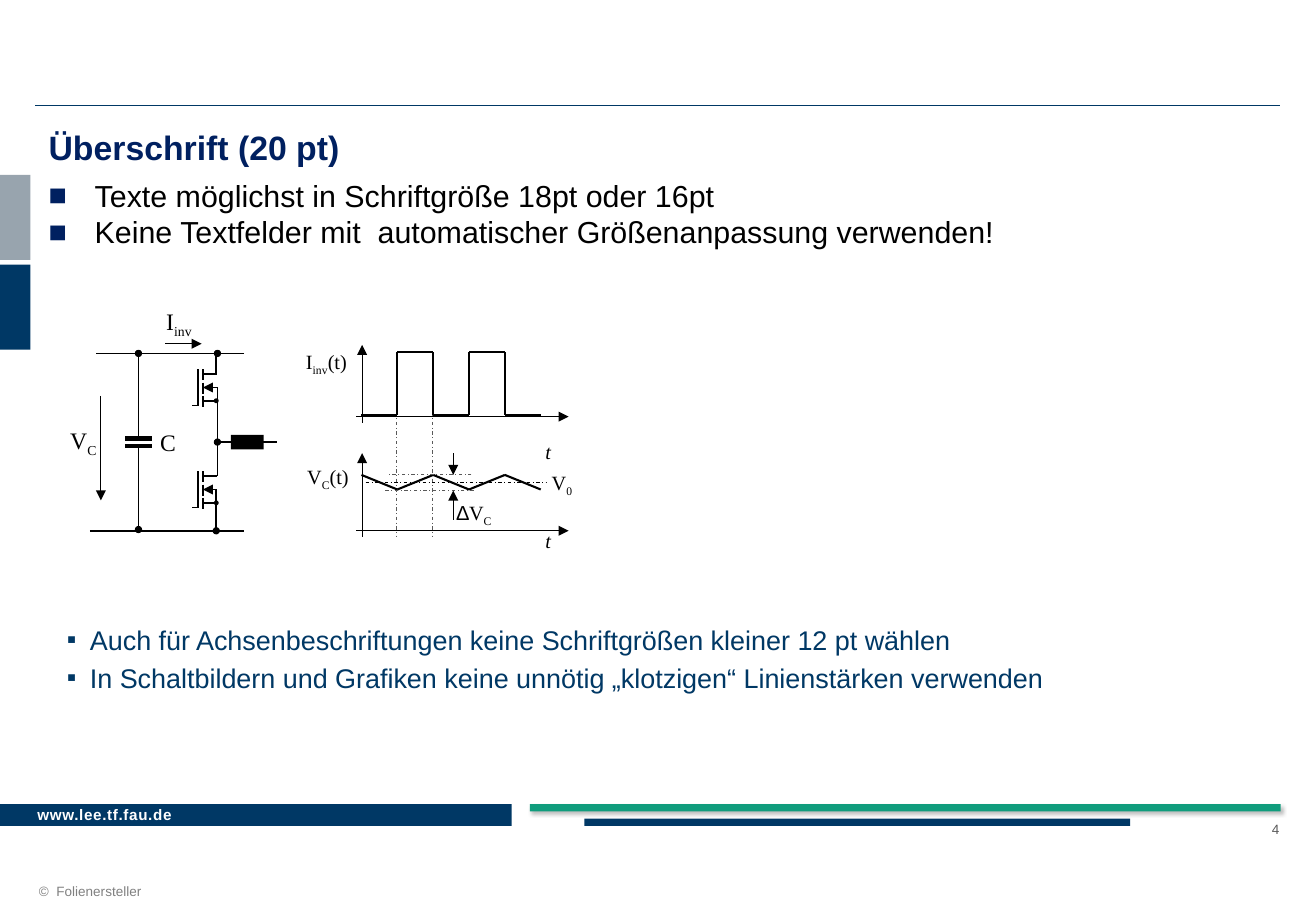
import itertools
from dataclasses import dataclass

import lxml.etree
import pptx
import pptx.dml.color
import pptx.enum.dml
import pptx.enum.shapes
import pptx.enum.text
import pptx.oxml.ns
import pptx.util

Inches = pptx.util.Inches
Pt = pptx.util.Pt
Shape = pptx.enum.shapes.MSO_SHAPE
SUBSCRIPT = {"baseline": -25}


@dataclass(frozen=True)
class Theme:
    """Colours, fonts, type sizes and line widths of the slide."""
    navy: str = "003865"
    heading_blue: str = "002060"
    green: str = "109C7C"
    silver: str = "98A4AE"
    grey: str = "595959"
    light_grey: str = "808080"
    black: str = "000000"
    white: str = "FFFFFF"
    sans: str = "Arial"
    serif: str = "Times New Roman"
    heading: float = 20
    body: float = 18
    note: float = 16
    circuit: float = 14
    axis: float = 12
    address: float = 9
    footer: float = 8
    hair: float = 0.5
    gate: float = 0.75
    wire: float = 1
    curve: float = 1.25
    channel: float = 1.5
    plate: float = 2.5


def add_xml(parent, tag, **attributes):
    """Append a DrawingML element and return it."""
    return lxml.etree.SubElement(parent, pptx.oxml.ns.qn(tag), attributes)


def write(para, text, *, size, font, color, bold=False, italic=False, baseline=0, spacing=0):
    """Add formatted text to a paragraph."""
    span = para.add_run()
    span.text = text
    span.font.size = Pt(size)
    span.font.name = font
    span.font.bold = bold
    span.font.italic = italic
    span.font.color.rgb = pptx.dml.color.RGBColor.from_string(color)
    properties = span._r.get_or_add_rPr()
    if baseline:
        properties.set("baseline", str(baseline * 1000))
    if spacing:
        properties.set("spc", str(int(spacing * 100)))


class Painter:
    """Draws styled elements on the current slide."""

    def __init__(self, page, theme):
        self.page = page
        self.theme = theme

    def line(self, start, end, width=None, color=None, dashed=False, head=False, tail=False):
        """Draw a straight line, with arrowheads on request."""
        connector = self.page.shapes.add_connector(
            pptx.enum.shapes.MSO_CONNECTOR.STRAIGHT, *map(Inches, (*start, *end)))
        connector.line.width = Pt(width or self.theme.wire)
        connector.line.color.rgb = pptx.dml.color.RGBColor.from_string(color or self.theme.black)
        if dashed:
            connector.line.dash_style = pptx.enum.dml.MSO_LINE.DASH_DOT
        outline = connector.line._get_or_add_ln()
        if head:
            add_xml(outline, "a:headEnd", type="triangle")
        if tail:
            add_xml(outline, "a:tailEnd", type="triangle")
        add_xml(connector._element.spPr, "a:effectLst")

    def polyline(self, points, width):
        """Join successive points with lines."""
        for start, end in itertools.pairwise(points):
            self.line(start, end, width)

    def shape(self, kind, left, top, width, height, color):
        """Draw a filled shape without outline."""
        shape = self.page.shapes.add_shape(kind, *map(Inches, (left, top, width, height)))
        shape.shadow.inherit = False
        shape.fill.solid()
        shape.fill.fore_color.rgb = pptx.dml.color.RGBColor.from_string(color)
        shape.line.fill.background()
        return shape

    def dot(self, x, y, size=0.06):
        """Draw a junction dot around a point."""
        self.shape(Shape.OVAL, x - size / 2, y - size / 2, size, size, self.theme.black)

    def shadow(self, shape):
        """Give a shape a soft shadow to the lower right."""
        effects = shape._element.spPr.find(pptx.oxml.ns.qn("a:effectLst"))
        outer = add_xml(effects, "a:outerShdw", blurRad=str(Pt(2)), dist=str(Pt(2)),
                        dir="2700000", algn="tl", rotWithShape="0")
        add_xml(add_xml(outer, "a:srgbClr", val=self.theme.grey), "a:alpha", val="38000")

    def text_box(self, left, top, width, height, inset=(0.1, 0.05), wrap=False, fill=None):
        """Add an empty text box."""
        box = self.page.shapes.add_textbox(*map(Inches, (left, top, width, height)))
        frame = box.text_frame
        frame.word_wrap = wrap
        frame.auto_size = (pptx.enum.text.MSO_AUTO_SIZE.NONE if wrap
                           else pptx.enum.text.MSO_AUTO_SIZE.SHAPE_TO_FIT_TEXT)
        frame.margin_left = frame.margin_right = Inches(inset[0])
        frame.margin_top = frame.margin_bottom = Inches(inset[1])
        if fill:
            box.fill.solid()
            box.fill.fore_color.rgb = pptx.dml.color.RGBColor.from_string(fill)
        return frame

    def label(self, place, size, *spans, **box_format):
        """Add a one-line serif label made of (text, format) spans."""
        para = self.text_box(*place, **box_format).paragraphs[0]
        for text, changes in spans:
            style = {"size": size, "font": self.theme.serif, "color": self.theme.black}
            write(para, text, **(style | changes))

    def bullet(self, para, mark, indent, color):
        """Turn a paragraph into a bullet item."""
        properties = para._p.get_or_add_pPr()
        properties.set("marL", str(Inches(indent)))
        properties.set("indent", str(-Inches(indent)))
        add_xml(add_xml(properties, "a:buClr"), "a:srgbClr", val=color)
        add_xml(properties, "a:buFont", typeface=self.theme.sans)
        add_xml(properties, "a:buChar", char=mark)

    def mosfet(self, top):
        """Draw a transistor whose channel starts at the given height."""
        theme = self.theme
        self.polyline([(1.63, top), (1.63, top + 0.3), (1.58, top + 0.3)], theme.gate)
        for step in range(3):
            start = top + 0.11 * step
            self.line((1.67, start), (1.67, start + 0.09), theme.channel)
            self.line((1.67, start + 0.04), (1.79, start + 0.04), head=step == 1)
        self.dot(1.78, top + 0.26, 0.04)

    def axes(self, top, base):
        """Draw a pair of chart axes."""
        self.line((2.98, base + 0.05), (2.98, top), self.theme.hair, tail=True)
        self.line((2.93, base), (4.68, base), self.theme.hair, tail=True)


def draw_frame(painter):
    """Draw the rule, side marks and footer."""
    theme = painter.theme
    painter.line((10.53, 0.87), (0.29, 0.87), color=theme.navy)
    painter.shape(Shape.RECTANGLE, 0, 2.18, 0.25, 0.7, theme.navy)
    painter.shape(Shape.RECTANGLE, 0, 1.44, 0.25, 0.7, theme.silver)
    credit = painter.text_box(0.32, 7.27, 2.61, 0.15, (0, 0), wrap=True).paragraphs[0]
    write(credit, "©  Folienersteller", size=theme.footer, font=theme.sans, color=theme.light_grey)
    number = painter.text_box(10.17, 6.76, 0.36, 0.13, (0, 0), wrap=True).paragraphs[0]
    number.alignment = pptx.enum.text.PP_ALIGN.RIGHT
    write(number, "4", size=theme.footer, font=theme.sans, color=theme.grey)
    painter.shape(Shape.RECTANGLE, 0, 6.62, 4.21, 0.18, theme.navy)
    painter.shape(Shape.RECTANGLE, 4.81, 6.74, 4.49, 0.06, theme.navy)
    painter.shadow(painter.shape(Shape.RECTANGLE, 4.36, 6.62, 6.18, 0.06, theme.green))
    address = painter.text_box(0.21, 6.58, 1.33, 0.25).paragraphs[0]
    write(address, "www.lee.tf.fau.de", size=theme.address, font=theme.sans,
          color=theme.white, bold=True, spacing=0.4)


def draw_circuit(painter):
    """Draw the half bridge with its capacitor."""
    theme = painter.theme
    for start, end in (((0.74, 4.37), (2.01, 4.37)), ((2.01, 2.91), (0.79, 2.91)),
                       ((1.14, 3.68), (1.14, 4.36)), ((1.14, 2.91), (1.14, 3.61)),
                       ((1.78, 2.9), (1.78, 3.08)), ((1.78, 4.03), (1.78, 4.37)),
                       ((1.79, 3.19), (1.79, 3.92)), ((1.8, 3.64), (2.28, 3.64))):
        painter.line(start, end)
    for height in (3.61, 3.67):
        painter.line((1.03, height), (1.25, height), theme.plate)
    for top in (3.04, 3.88):
        painter.mosfet(top)
    for point in ((1.14, 4.36), (1.14, 2.91), (1.79, 3.64), (1.79, 2.91), (1.78, 4.37)):
        painter.dot(*point)
    painter.shape(Shape.RECTANGLE, 1.9, 3.58, 0.27, 0.12, theme.black)
    painter.line((0.83, 3.26), (0.83, 4.12), theme.hair, tail=True)
    painter.line((1.36, 2.83), (1.66, 2.83), theme.hair, tail=True)
    painter.label((0.48, 3.46, 0.43, 0.34), theme.circuit, ("V", {}), ("C", SUBSCRIPT))
    painter.label((1.27, 2.48, 0.43, 0.34), theme.circuit, ("I", {}), ("inv", SUBSCRIPT))
    painter.label((1.22, 3.47, 0.33, 0.34), theme.circuit, ("C", {}))


def draw_waveforms(painter):
    """Draw the current pulses and the voltage ripple."""
    theme = painter.theme
    steps = [2.975 + 0.295 * step for step in range(6)]
    for x in (3.26, 3.56):
        painter.line((x, 3.24), (x, 4.42), theme.hair, theme.grey, dashed=True)
    painter.axes(2.84, 3.43)
    painter.axes(3.73, 4.37)
    levels = (3.42, 2.9, 3.42, 2.9, 3.42)
    pulses = [(x, level) for edges, level in zip(itertools.pairwise(steps), levels) for x in edges]
    painter.polyline(pulses, theme.curve)
    painter.line((3.01, 3.97), (4.55, 3.97), theme.hair, dashed=True)
    painter.polyline(zip(steps, itertools.cycle((3.91, 4.03))), theme.curve)
    painter.label((4.5, 3.83, 0.26, 0.28), theme.axis, ("V", {}), ("0", SUBSCRIPT),
                  inset=(0.04, 0.04), fill=theme.white)
    for start, end, height in ((3.88, 3.2, 3.91), (3.9, 3.17, 4.04)):
        painter.line((start, height), (end, height), theme.hair, theme.grey, dashed=True)
    for start, end in ((4.28, 4.04), (3.73, 3.91)):
        painter.line((3.73, start), (3.73, end), theme.hair, tail=True)
    for left, top, name, index in ((2.42, 2.83, "I", "inv"), (2.43, 3.77, "V", "C")):
        painter.label((left, top, 0.56, 0.3), theme.axis,
                      (name, {}), (index, SUBSCRIPT), ("(t)", {}))
    for top in (3.57, 4.3):
        painter.label((4.39, top, 0.25, 0.3), theme.axis, ("t", {"italic": True}))
    painter.label((3.66, 4.07, 0.5, 0.3), theme.axis,
                  ("∆", {"font": theme.sans}), ("V", {}), ("C", SUBSCRIPT))


def draw_texts(painter):
    """Add the heading and both bullet lists."""
    theme = painter.theme
    notes = painter.text_box(0.51, 5.09, 8.33, 0.67, (0.04, 0.04))
    for index, text in enumerate((
            "Auch für Achsenbeschriftungen keine Schriftgrößen kleiner 12 pt wählen",
            "In Schaltbildern und Grafiken keine unnötig „klotzigen“ Linienstärken verwenden")):
        para = notes.add_paragraph() if index else notes.paragraphs[0]
        painter.bullet(para, "▪", 0.19, theme.navy)
        para.space_after = Pt(3.6)
        write(para, text, size=theme.note, font=theme.sans, color=theme.navy)
    body = painter.text_box(0.36, 1, 8.07, 1.11, (0.04, 0.04))
    heading = body.paragraphs[0]
    heading.space_after = Pt(6)
    write(heading, "Überschrift (20 pt)", size=theme.heading, font=theme.sans,
          color=theme.heading_blue, bold=True)
    for text in ("Texte möglichst in Schriftgröße 18pt oder 16pt",
                 "Keine Textfelder mit  automatischer Größenanpassung verwenden!"):
        para = body.add_paragraph()
        painter.bullet(para, "■", 0.38, theme.heading_blue)
        write(para, text, size=theme.body, font=theme.sans, color=theme.black)


def main():
    """Build and save the deck."""
    deck = pptx.Presentation()
    deck.slide_width, deck.slide_height = Inches(10.83), Inches(7.5)
    painter = Painter(deck.slides.add_slide(deck.slide_layouts[6]), Theme())
    for draw in (draw_frame, draw_circuit, draw_waveforms, draw_texts):
        draw(painter)
    deck.save("out.pptx")


if __name__ == "__main__":
    main()
